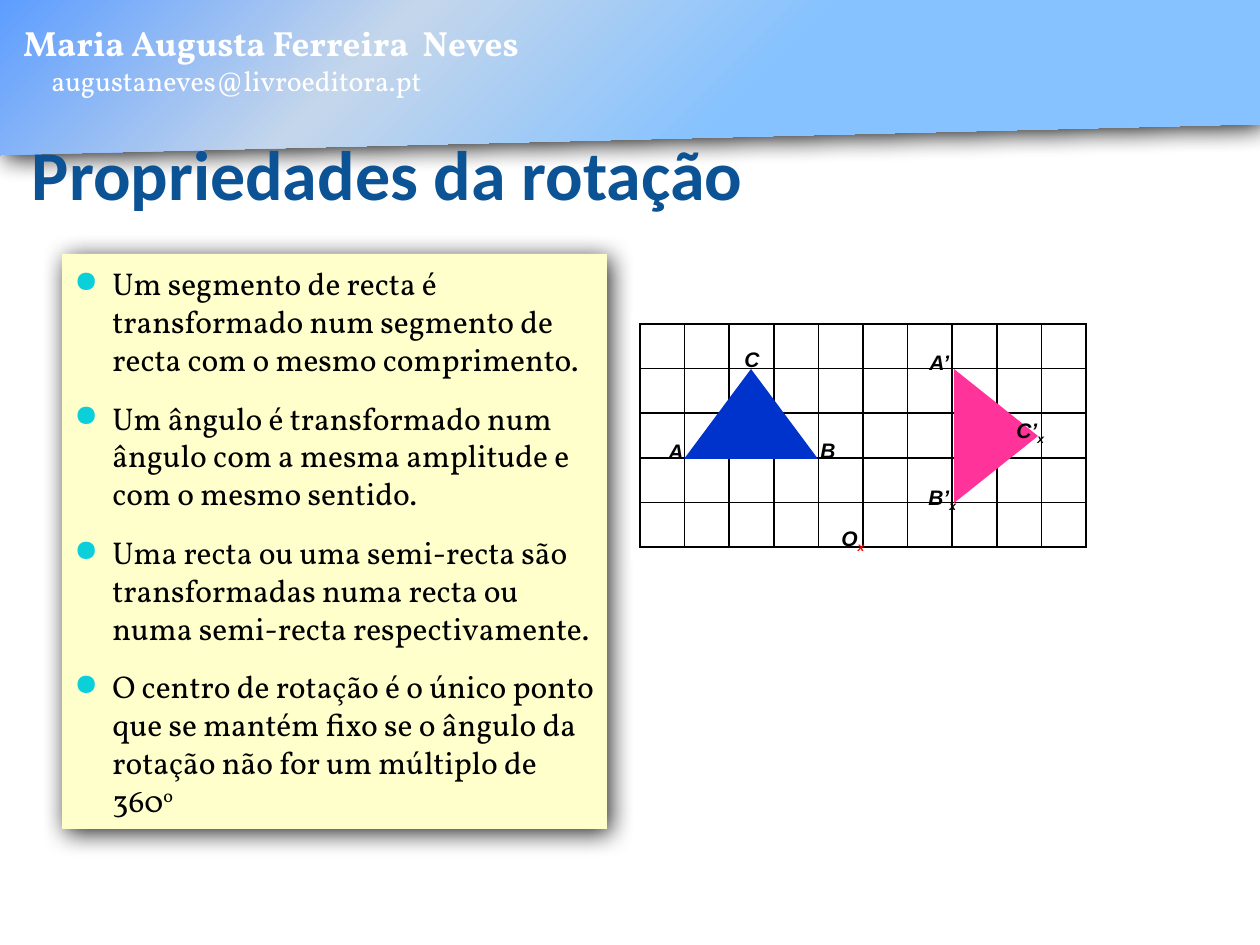
from lxml import etree
from pptx import Presentation
from pptx import util as u
from pptx.dml.color import RGBColor
from pptx.enum import shapes, text
from pptx.oxml import parse_xml
from pptx.oxml.ns import nsdecls, qn

SCALE = 914400 / 126
HUES = {
    "white": "FFFFFF", "black": "000000", "cream": "FFFFCC",
    "blue": "0033CC", "pink": "FF3399", "red": "FF0000",
    "title": "0B5394", "dot": "0BD0D9",
}
FADE = [(40, "85C2FF"), (70, "C4D6EB"), (100, "5E9EFF"), (100, "FFEBFA")]
RULES = [
    [("Um segmento de recta é transformado num segmento de recta com o mesmo comprimento.", 0)],
    [("Um ângulo é transformado num ângulo com a mesma amplitude e com o mesmo sentido.", 0)],
    [("Uma recta ou uma semi-recta são transformadas numa recta ou numa semi-recta respectivamente.", 0)],
    [("O centro de rotação é o único ponto que se mantém fixo se o ângulo da rotação "
      "não for um múltiplo de 360", 0), ("o", 30)],
]
LABELS = [
    ("B’", "black", 916, 478, 59),
    ("A’", None, 917, 343, 59),
    ("C’", "black", 1004, 411, 59),
    ("A", None, 656, 432, 40),
    ("B", None, 808, 431, 40),
    ("C", None, 732, 340, 40),
    ("O", "red", 829, 519, 50),
]


def px(n):
    return u.Emu(round(n * SCALE))


def rgb(name):
    return RGBColor.from_string(HUES[name])


def add_run(para, words, face, size, hue, bold=False, slant=False, base=0):
    run = para.add_run()
    run.text = words
    font = run.font
    font.name, font.size, font.bold, font.italic = face, u.Pt(size), bold, slant
    font.color.rgb = rgb(hue)
    if base:
        font._element.set("baseline", str(base * 1000))


def add_box(slide, x, y, w, h):
    frame = slide.shapes.add_textbox(px(x), px(y), px(w), px(h)).text_frame
    frame.word_wrap = True
    return frame


def add_form(slide, kind, hue, x, y, w, h, turn=0):
    form = slide.shapes.add_shape(kind, px(x), px(y), px(w), px(h))
    form.rotation = turn
    form.shadow.inherit = False
    form.fill.solid()
    form.fill.fore_color.rgb = rgb(hue)
    form.line.fill.background()
    return form


def add_shade(form):
    glow = form._element.spPr.find(qn("a:effectLst"))
    glow.append(parse_xml(
        f'<a:outerShdw {nsdecls("a")} blurRad="177800" dist="38100" dir="2700000" '
        'algn="ctr" rotWithShape="0"><a:srgbClr val="000000">'
        '<a:alpha val="84000"/></a:srgbClr></a:outerShdw>'))


def add_fade(form):
    stops = "".join(
        f'<a:gs pos="{pos * 1000}"><a:srgbClr val="{hue}"/></a:gs>' for pos, hue in FADE)
    fade = parse_xml(
        f'<a:gradFill {nsdecls("a")} rotWithShape="0"><a:gsLst>{stops}</a:gsLst>'
        '<a:path path="circle"><a:fillToRect l="100000" t="100000"/></a:path></a:gradFill>')
    props = form._element.spPr
    props.replace(props.find(qn("a:solidFill")), fade)


def add_header(slide):
    form = add_form(slide, shapes.MSO_SHAPE.FLOWCHART_MANUAL_INPUT, "white", 0, 0, 1260, 155, 180)
    add_fade(form)
    add_shade(form)
    frame = add_box(slide, 11, 15, 916, 89)
    add_run(frame.paragraphs[0], "Maria Augusta Ferreira  Neves", "Vollkorn", 20, "white", True)
    mail = frame.add_paragraph()
    mail._p.get_or_add_pPr().set("marL", str(px(28)))
    add_run(mail, "augustaneves@livroeditora.pt", "Vollkorn", 16, "white")


def set_title(slide):
    title = slide.shapes.title
    title.left, title.top, title.width, title.height = px(32), px(118), px(777), px(97)
    frame = title.text_frame
    frame.auto_size = text.MSO_AUTO_SIZE.NONE
    frame.word_wrap = True
    frame.vertical_anchor = text.MSO_ANCHOR.BOTTOM
    frame.margin_left = frame.margin_right = frame.margin_bottom = 0
    para = frame.paragraphs[0]
    para.alignment = text.PP_ALIGN.LEFT
    add_run(para, "Propriedades da rotação", "Calibri", 40, "title", True)
    title._element.getparent().append(title._element)


def add_dot(para):
    props = para._p.get_or_add_pPr()
    props.set("marL", str(px(38)))
    props.set("indent", str(-px(38)))
    hue = etree.SubElement(props, qn("a:buClr"))
    etree.SubElement(hue, qn("a:srgbClr")).set("val", HUES["dot"])
    etree.SubElement(props, qn("a:buSzPct")).set("val", "95000")
    etree.SubElement(props, qn("a:buChar")).set("char", "●")


def add_rules(slide):
    form = add_form(slide, shapes.MSO_SHAPE.RECTANGLE, "cream", 62, 254, 545, 575)
    add_shade(form)
    frame = form.text_frame
    frame.word_wrap = True
    frame.vertical_anchor = text.MSO_ANCHOR.MIDDLE
    for i, parts in enumerate(RULES):
        para = frame.add_paragraph() if i else frame.paragraphs[0]
        add_dot(para)
        para.alignment = text.PP_ALIGN.LEFT
        if i:
            para.space_before = u.Pt(12)
        for words, base in parts:
            add_run(para, words, "Vollkorn", 18, "black", base=base)


def add_edges(cell):
    props = cell._tc.get_or_add_tcPr()
    for i, side in enumerate(("lnL", "lnR", "lnT", "lnB")):
        props.insert(i, parse_xml(
            f'<a:{side} {nsdecls("a")} w="12700"><a:solidFill>'
            f'<a:srgbClr val="{HUES["black"]}"/></a:solidFill></a:{side}>'))


def add_grid(slide, x, y, w, h, rows, cols):
    table = slide.shapes.add_table(rows, cols, px(x), px(y), px(w), px(h)).table
    table.first_row = table.horz_banding = False
    for col in table.columns:
        col.width = px(w) // cols
    for row in table.rows:
        row.height = px(h) // rows
    for cell in table.iter_cells():
        cell.margin_left = cell.margin_right = cell.margin_top = cell.margin_bottom = 0
        cell.fill.background()
        add_edges(cell)


def add_label(slide, name, mark, x, y, w):
    para = add_box(slide, x, y, w, 42).paragraphs[0]
    para.space_after = u.Pt(10)
    add_run(para, name, "Arial", 12, "black", True, True)
    if mark:
        add_run(para, "x", "Arial", 12, mark, True, True, -25)


def add_figure(slide):
    add_form(slide, shapes.MSO_SHAPE.RECTANGLE, "white", 631, 314, 466, 248)
    add_grid(slide, 640, 324, 446, 223, 5, 10)
    peak = shapes.MSO_SHAPE.ISOSCELES_TRIANGLE
    add_form(slide, peak, "pink", 929, 394, 134, 84, 90)
    add_form(slide, peak, "blue", 684, 369, 134, 90)
    for label in LABELS:
        add_label(slide, *label)


def main():
    deck = Presentation()
    deck.slide_width, deck.slide_height = px(1260), px(945)
    slide = deck.slides.add_slide(deck.slide_layouts[5])
    add_header(slide)
    add_rules(slide)
    add_figure(slide)
    set_title(slide)
    deck.save("out.pptx")


if __name__ == "__main__":
    main()
